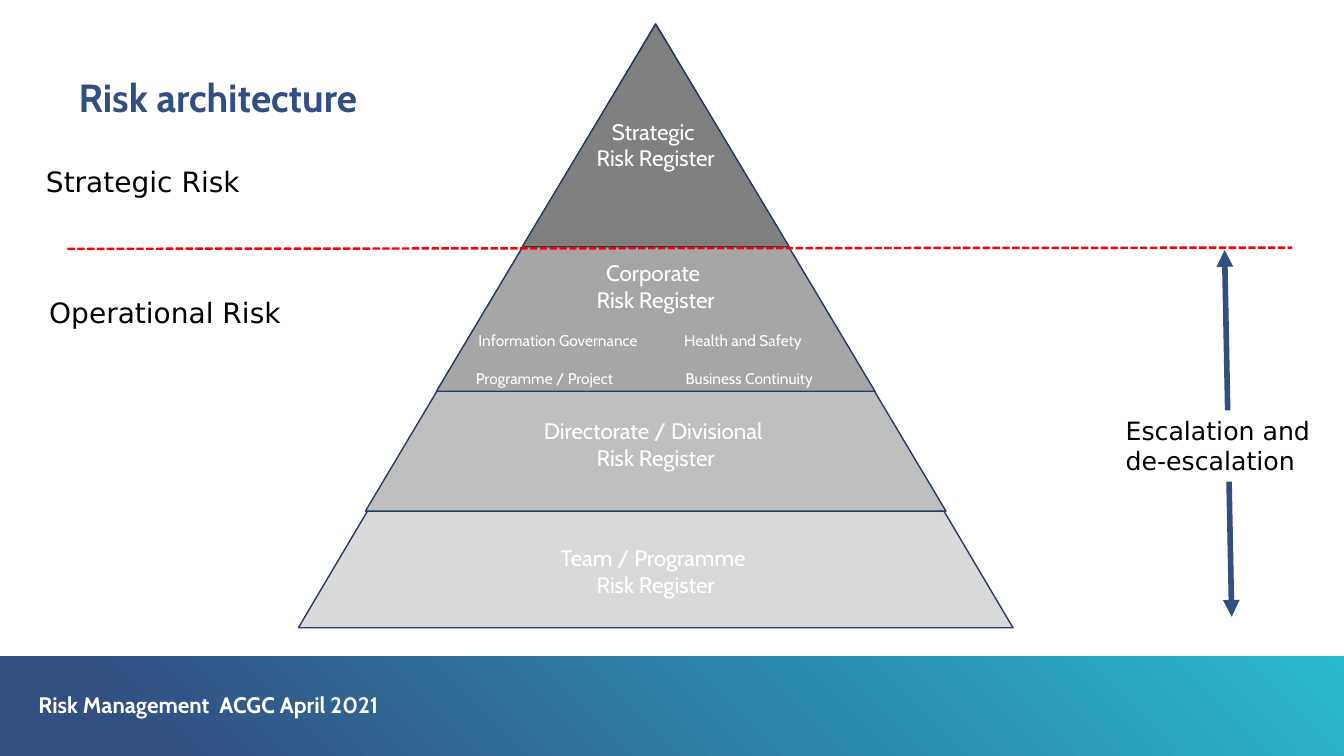
from pptx import Presentation
from pptx.dml.color import RGBColor
from pptx.enum import dml, shapes, text
from pptx.oxml.ns import qn
from pptx.util import Cm, Pt
from lxml import etree

WHITE = RGBColor(0xFF, 0xFF, 0xFF)
BLACK = RGBColor(0x00, 0x00, 0x00)
NAVY = RGBColor(0x32, 0x4F, 0x82)
TEAL = RGBColor(0x28, 0xB8, 0xCE)
EDGE = RGBColor(0x25, 0x3A, 0x60)
RED = RGBColor(0xFF, 0x00, 0x00)
HEAD, PLAIN = "Cabin", "DejaVu Sans"

# Pyramid tiers, widest first: width, height, grey level
TIERS = [(18.01, 15.21, 0xD9), (14.63, 12.27, 0xBF),
         (11.05, 9.25, 0xA6), (6.73, 5.61, 0x80)]
# Register names with their drop below the apex
NAMES = [("Strategic ", 2.23), ("Corporate ", 5.79),
         ("Directorate / Divisional ", 9.78), ("Team / Programme ", 12.98)]
# Topics of the corporate tier: text, centre relative to the apex, drop
TOPICS = [("Information Governance", -2.46, 7.62),
          ("Health and Safety", 2.2, 7.62),
          ("Programme / Project", -2.8, 8.56),
          ("Business Continuity", 2.36, 8.56)]


def style(para, font, size, color, bold=False):
    para.font.name = font
    para.font.size = Pt(size)
    para.font.color.rgb = color
    para.font.bold = bold


def label(slide, x, y, w, h, words, font, size, color, align, fill=None):
    box = slide.shapes.add_textbox(Cm(x), Cm(y), Cm(w), Cm(h))
    if fill is not None:
        box.fill.solid()
        box.fill.fore_color.rgb = fill
    frame = box.text_frame
    frame.word_wrap = True
    frame.auto_size = text.MSO_AUTO_SIZE.SHAPE_TO_FIT_TEXT
    frame.text = words
    for para in frame.paragraphs:
        para.alignment = align
        style(para, font, size, color)


def holder(shape, x, y, w, h, words, size, color):
    """Move a placeholder and set its bold heading text."""
    shape.left, shape.top, shape.width, shape.height = map(Cm, (x, y, w, h))
    frame = shape.text_frame
    frame.margin_left = frame.margin_right = 0
    frame.margin_top = frame.margin_bottom = 0
    frame.vertical_anchor = text.MSO_ANCHOR.TOP
    frame.auto_size = text.MSO_AUTO_SIZE.NONE
    frame.word_wrap = True
    frame.text = words
    para = frame.paragraphs[0]
    para.alignment = text.PP_ALIGN.LEFT
    para.line_spacing = 0.9
    para.space_before = Pt(0)
    props = para._p.get_or_add_pPr()
    props.set("marL", "0")
    props.set("indent", "0")
    etree.SubElement(props, qn("a:buNone"))
    style(para, HEAD, size, color, True)


def rule(slide, x1, y1, x2, y2, color, width):
    line = slide.shapes.add_connector(
        shapes.MSO_CONNECTOR.STRAIGHT, Cm(x1), Cm(y1), Cm(x2), Cm(y2))
    line.line.color.rgb = color
    line.line.width = Pt(width)
    etree.SubElement(line._element.spPr, qn("a:effectLst"))
    return line


def footer(slide, x, y, w, h):
    band = slide.shapes.add_shape(
        shapes.MSO_SHAPE.RECTANGLE, Cm(x), Cm(y), Cm(w), Cm(h))
    band.shadow.inherit = False
    band.line.fill.background()
    band.fill.gradient()
    band.fill.gradient_angle = 45
    start, end = band.fill.gradient_stops
    start.color.rgb, start.position = NAVY, 0.1
    end.color.rgb, end.position = TEAL, 1
    # Send the band behind the placeholders
    slide.shapes._spTree.insert(2, band._element)
    holder(slide.placeholders[1], x + 0.97, y + 0.94, 9.98, 0.61,
           "Risk Management  ACGC April 2021", 16, WHITE)


def pyramid(slide, x, y, w):
    mid = x + w / 2
    for wide, high, grey in TIERS:
        tier = slide.shapes.add_shape(
            shapes.MSO_SHAPE.ISOSCELES_TRIANGLE,
            Cm(mid - wide / 2), Cm(y), Cm(wide), Cm(high))
        tier.shadow.inherit = False
        tier.fill.solid()
        tier.fill.fore_color.rgb = RGBColor(grey, grey, grey)
        tier.line.color.rgb = EDGE
        tier.line.width = Pt(1)
    centre = text.PP_ALIGN.CENTER
    for name, drop in NAMES:
        label(slide, mid - 3.3, y + drop, 6.6, 1.63,
              name + "\nRisk Register", HEAD, 16, WHITE, centre)
    for topic, shift, drop in TOPICS:
        label(slide, mid + shift - 2.58, y + drop, 5.16, 0.74,
              topic, HEAD, 11, WHITE, centre)


def levels(slide, x, y, w):
    """Dashed border between the two kinds of risk, with their names."""
    border = rule(slide, x, y, x + w, y - 0.03, RED, 1.75)
    border.line.dash_style = dml.MSO_LINE.SQUARE_DOT
    for words, dx, dy, wide in [("Strategic Risk", -0.79, -2.26, 5.49),
                                ("Operational Risk", -0.71, 1.04, 6.4)]:
        label(slide, x + dx, y + dy, wide, 1.12, words,
              PLAIN, 20, BLACK, text.PP_ALIGN.LEFT, WHITE)


def escalation(slide, x, y, w, h):
    arrow = rule(slide, x + 2.74, y, x + 2.92, y + h, NAVY, 4)
    ends = arrow.line._get_or_add_ln()
    for end in ("a:headEnd", "a:tailEnd"):
        etree.SubElement(ends, qn(end), type="triangle")
    label(slide, x, y + 4.04, w, 1.8, "Escalation and de-escalation",
          PLAIN, 18, BLACK, text.PP_ALIGN.LEFT, WHITE)


def main():
    deck = Presentation()
    deck.slide_width, deck.slide_height = Cm(33.87), Cm(19.05)
    slide = deck.slides.add_slide(deck.slide_layouts[1])
    footer(slide, 0, 16.54, 33.87, 2.51)
    holder(slide.shapes.title, 1.98, 1.98, 29.9, 1.09,
           "Risk architecture", 28, NAVY)
    pyramid(slide, 7.52, 0.61, 18.01)
    levels(slide, 1.7, 6.27, 30.86)
    escalation(slide, 28.12, 6.3, 5.46, 9.24)
    deck.save("out.pptx")


if __name__ == "__main__":
    main()
